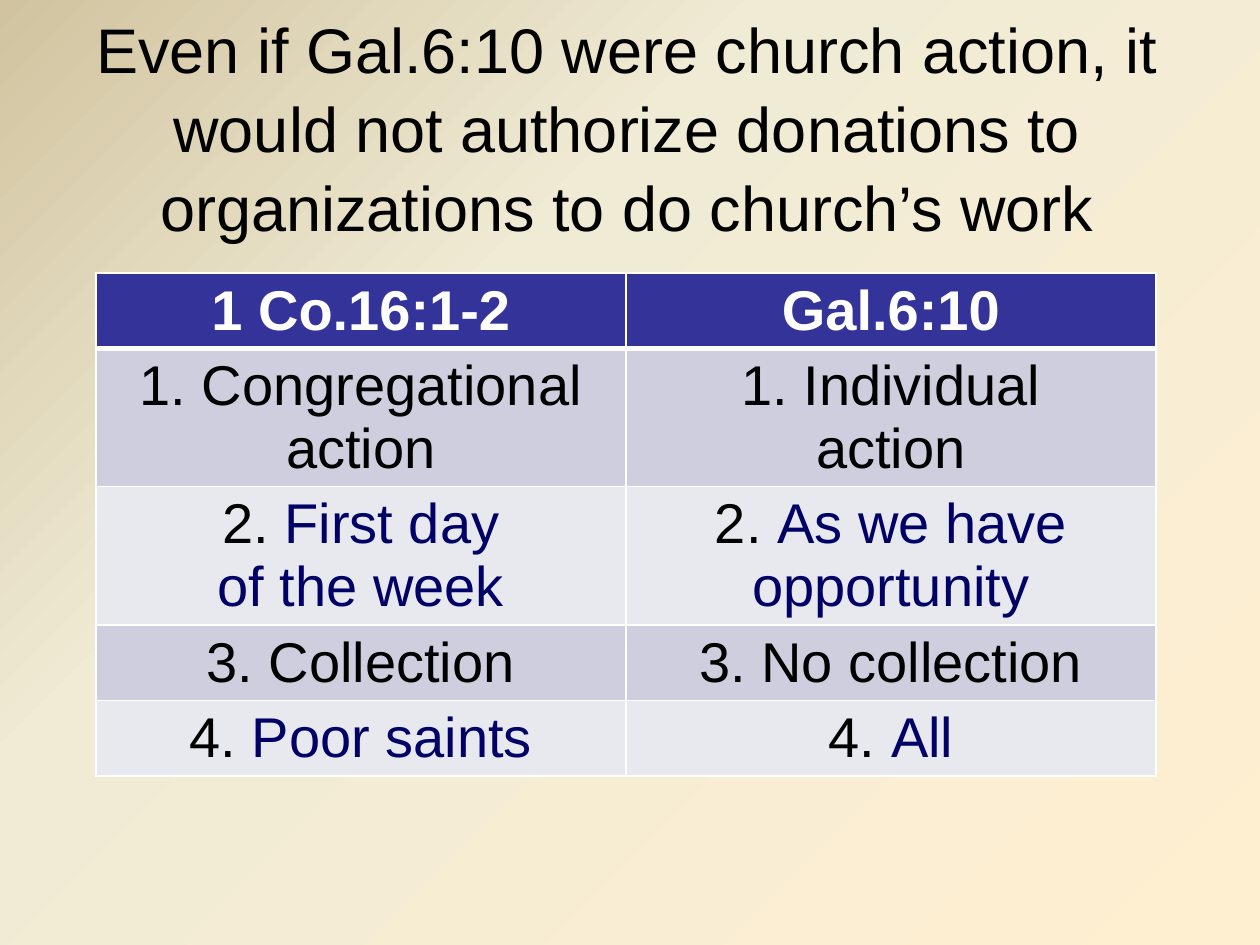
from copy import deepcopy
from dataclasses import dataclass

from pptx import Presentation
from pptx import util as u
from pptx.dml.color import RGBColor
from pptx.enum import text
from pptx.oxml import parse_xml
from pptx.oxml.ns import nsdecls, qn

PX = u.Inches(1) / 126


@dataclass(frozen=True)
class Theme:
    font: str = "Arial"
    title_size: int = 36
    table_size: int = 32
    ink: str = "000000"
    accent: str = "000066"
    white: str = "FFFFFF"
    header: str = "333399"
    bands: tuple = ("CECEDE", "E8E8EF")
    backdrop: tuple = ((0, "D1C39F"), (0.35, "F0EBD5"), (1, "FFEFD1"))


THEME = Theme()

HEADING = ("Even if Gal.6:10 were church action, it would not authorize "
           "donations to organizations to do church’s work")
REFERENCES = ("1 Co.16:1-2", "Gal.6:10")
# Each point: row height, colour of its wording, wording per reference
POINTS = (
    (138, THEME.ink, ("Congregational action", "Individual\naction")),
    (138, THEME.accent, ("First day\nof the week", "As we have opportunity")),
    (75, THEME.ink, ("Collection", "No collection")),
    (75, THEME.accent, ("Poor saints", "All")),
)
HEADER_HEIGHT = 75


def px(length):
    return u.Emu(round(length * PX))


def write(paragraph, wording, *, size, color=THEME.ink, bold=False):
    """Append wording to a centred paragraph, breaking lines at newlines."""
    paragraph.alignment = text.PP_ALIGN.CENTER
    for number, line in enumerate(wording.split("\n")):
        if number:
            paragraph.add_line_break()
        run = paragraph.add_run()
        run.text = line
        run.font.name = THEME.font
        run.font.size = u.Pt(size)
        run.font.bold = bold
        run.font.color.rgb = RGBColor.from_string(color)


def paint_background(slide):
    fill = slide.background.fill
    fill.gradient()
    fill.gradient_angle = 315
    stop_list = slide.element.find(".//" + qn("a:gsLst"))
    stop_list.append(deepcopy(stop_list[-1]))
    for stop, (position, color) in zip(fill.gradient_stops, THEME.backdrop):
        stop.position = position
        stop.color.rgb = RGBColor.from_string(color)


def add_heading(slide):
    heading = slide.shapes.title
    heading.left, heading.top = px(60), px(10)
    heading.width, heading.height = px(1134), px(231)
    frame = heading.text_frame
    frame.word_wrap = True
    frame.auto_size = text.MSO_AUTO_SIZE.NONE
    frame.vertical_anchor = text.MSO_ANCHOR.MIDDLE
    frame.paragraphs[0].line_spacing = 1.05
    write(frame.paragraphs[0], HEADING, size=THEME.title_size)


def style_cell(cell, fill, top=1, bottom=1):
    """Fill a cell and draw its white borders, with widths in points."""
    cell.vertical_anchor = text.MSO_ANCHOR.MIDDLE
    cell.fill.solid()
    cell.fill.fore_color.rgb = RGBColor.from_string(fill)
    properties = cell._tc.get_or_add_tcPr()
    widths = {"lnL": 1, "lnR": 1, "lnT": top, "lnB": bottom}
    for place, (side, width) in enumerate(widths.items()):
        properties.insert(place, parse_xml(
            f'<a:{side} {nsdecls("a")} w="{u.Pt(width)}"><a:solidFill>'
            f'<a:srgbClr val="{THEME.white}"/></a:solidFill></a:{side}>'))


def add_comparison(slide):
    heights = [HEADER_HEIGHT] + [height for height, _, _ in POINTS]
    table = slide.shapes.add_table(
        len(heights), len(REFERENCES),
        px(96), px(273), px(1060), px(sum(heights))).table
    for row, height in zip(table.rows, heights):
        row.height = px(height)

    # Header row
    for column, reference in enumerate(REFERENCES):
        cell = table.cell(0, column)
        style_cell(cell, THEME.header, bottom=3)
        write(cell.text_frame.paragraphs[0], reference,
              size=THEME.table_size, color=THEME.white, bold=True)

    # Numbered points in alternating bands
    for number, (_, color, wordings) in enumerate(POINTS, start=1):
        band = THEME.bands[(number - 1) % len(THEME.bands)]
        for column, wording in enumerate(wordings):
            cell = table.cell(number, column)
            style_cell(cell, band, top=3 if number == 1 else 1)
            paragraph = cell.text_frame.paragraphs[0]
            write(paragraph, f"{number}. ", size=THEME.table_size)
            write(paragraph, wording, size=THEME.table_size, color=color)


def main():
    deck = Presentation()
    deck.slide_width, deck.slide_height = u.Inches(10), u.Inches(7.5)
    slide = deck.slides.add_slide(deck.slide_layouts[5])
    paint_background(slide)
    add_heading(slide)
    add_comparison(slide)
    deck.save("out.pptx")


if __name__ == "__main__":
    main()
